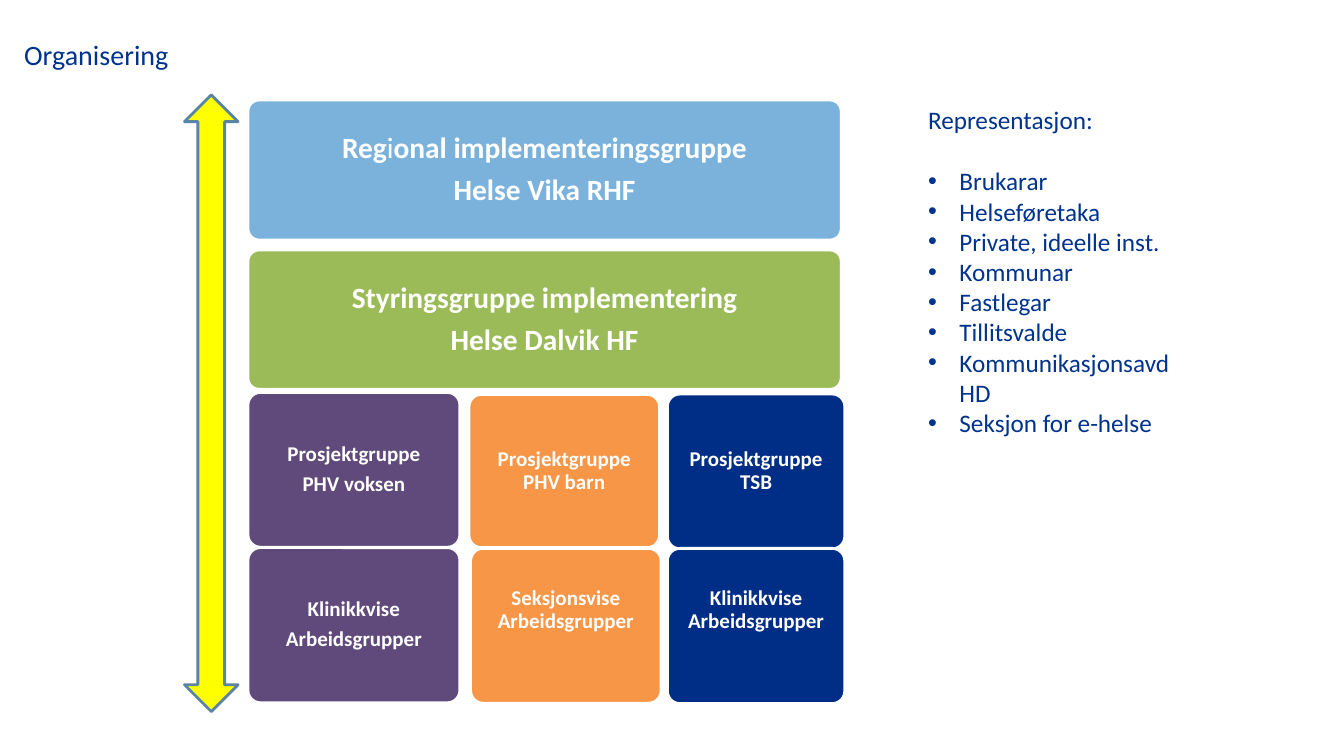
from lxml import etree
from pptx import Presentation
from pptx.dml.color import RGBColor
from pptx.enum.shapes import MSO_SHAPE as Shape
from pptx.enum.text import MSO_ANCHOR as Anchor, PP_ALIGN as Align
from pptx.oxml.ns import qn
from pptx.util import Cm, Pt

FONT = "Calibri"
WHITE = RGBColor(0xFF, 0xFF, 0xFF)
LIGHT_BLUE = RGBColor(0x7A, 0xB2, 0xDC)
GREEN = RGBColor(0x9B, 0xBB, 0x59)
PURPLE = RGBColor(0x60, 0x4A, 0x7B)
ORANGE = RGBColor(0xF7, 0x96, 0x46)
NAVY = RGBColor(0x00, 0x2D, 0x86)
TEXT_BLUE = RGBColor(0x00, 0x33, 0x8D)
YELLOW = RGBColor(0xFF, 0xFF, 0x00)
ARROW_EDGE = RGBColor(0x5A, 0x84, 0xA3)

# Left, top, width, height in cm; fill, size, space below the text in cm, lines
# A line is a list of (text, bold) runs
GROUPS = [
    (6.25, 2.52, 14.95, 3.53, LIGHT_BLUE, 21, 0,
     [[("Reg", True), ("i", False), ("onal implementeringsgruppe", True)],
      [("Helse Vika RHF", True)]]),
    (6.25, 6.3, 14.95, 3.51, GREEN, 21, 0,
     [[("Styringsgruppe implementering", True)], [("Helse Dalvik HF", True)]]),
    (6.25, 9.89, 5.34, 3.9, PURPLE, 15, 0,
     [[("Prosjektgruppe", True)], [("PHV voksen", True)]]),
    (6.25, 13.8, 5.34, 3.91, PURPLE, 15, 0,
     [[("Klinikkvise", True)], [("Arbeidsgrupper", True)]]),
    (11.82, 9.94, 4.8, 3.86, ORANGE, 15, 0,
     [[("Prosjektgruppe PHV barn", True)]]),
    (11.86, 13.82, 4.8, 3.9, ORANGE, 15, 0.8,
     [[("Seksjonsvise Arbeidsgrupper", True)]]),
    (16.82, 9.93, 4.47, 3.9, NAVY, 15, 0,
     [[("Prosjektgruppe TSB", True)]]),
    (16.82, 13.82, 4.47, 3.91, NAVY, 15, 0.8,
     [[("Klinikkvise Arbeidsgrupper", True)]]),
]

MEMBERS = ["Brukarar", "Helseføretaka", "Private, ideelle inst.", "Kommunar",
           "Fastlegar", "Tillitsvalde", "Kommunikasjonsavd HD",
           "Seksjon for e-helse"]


def apply_format(target, values):
    for name, value in values.items():
        setattr(target, name, value)


def add_run(p, text, size, color, bold=False):
    r = p.add_run()
    r.text = text
    apply_format(r.font, {"name": FONT, "size": Pt(size), "bold": bold})
    r.font.color.rgb = color


def add_figure(s, kind, box, fill, edge):
    sp = s.shapes.add_shape(kind, *map(Cm, box))
    sp.shadow.inherit = False
    sp.fill.solid()
    sp.fill.fore_color.rgb = fill
    sp.line.color.rgb = edge
    sp.line.width = Pt(2)
    return sp


def add_group(s, left, top, width, height, fill, size, below, lines):
    sp = add_figure(s, Shape.ROUNDED_RECTANGLE, (left, top, width, height),
                    fill, WHITE)
    sp.adjustments[0] = 0.08
    tf = sp.text_frame
    apply_format(tf, {"word_wrap": True, "vertical_anchor": Anchor.MIDDLE,
                      "margin_left": Cm(0.14), "margin_right": Cm(0.14),
                      "margin_top": Cm(0.14), "margin_bottom": Cm(0.14 + below)})
    for i, line in enumerate(lines):
        p = tf.add_paragraph() if i else tf.paragraphs[0]
        apply_format(p, {"alignment": Align.CENTER, "line_spacing": 0.9,
                         "space_before": Pt(0 if i == 0 else 0.35 * size)})
        for text, bold in line:
            add_run(p, text, size, WHITE, bold)


def add_heading(s, box, text, size):
    tf = s.shapes.add_textbox(*map(Cm, box)).text_frame
    tf.word_wrap = True
    add_run(tf.paragraphs[0], text, size, TEXT_BLUE)
    return tf


def add_bullet(tf, text, size, before):
    p = tf.add_paragraph()
    pPr = p._p.get_or_add_pPr()
    indent = Cm(0.79)
    pPr.set("marL", str(indent))
    pPr.set("indent", str(-indent))
    etree.SubElement(pPr, qn("a:buFont")).set("typeface", "Arial")
    etree.SubElement(pPr, qn("a:buChar")).set("char", "•")
    p.space_before = Pt(before)
    add_run(p, text, size, TEXT_BLUE)


def main():
    prs = Presentation()
    prs.slide_width, prs.slide_height = Cm(33.87), Cm(19.05)
    s = prs.slides.add_slide(prs.slide_layouts[6])

    # Organisation boxes
    for group in GROUPS:
        add_group(s, *group)

    # Representation list, set apart from its heading by one line
    tf = add_heading(s, (23.14, 2.51, 7.34, 13.34), "Representasjon:", 18)
    for i, member in enumerate(MEMBERS):
        add_bullet(tf, member, 18, 0 if i else 22)

    # Title and the two-way arrow
    add_heading(s, (0.36, 0.81, 23.77, 1.12), "Organisering", 20)
    add_figure(s, Shape.UP_DOWN_ARROW, (4.65, 2.39, 1.35, 15.54),
               YELLOW, ARROW_EDGE)

    prs.save("out.pptx")


if __name__ == "__main__":
    main()
